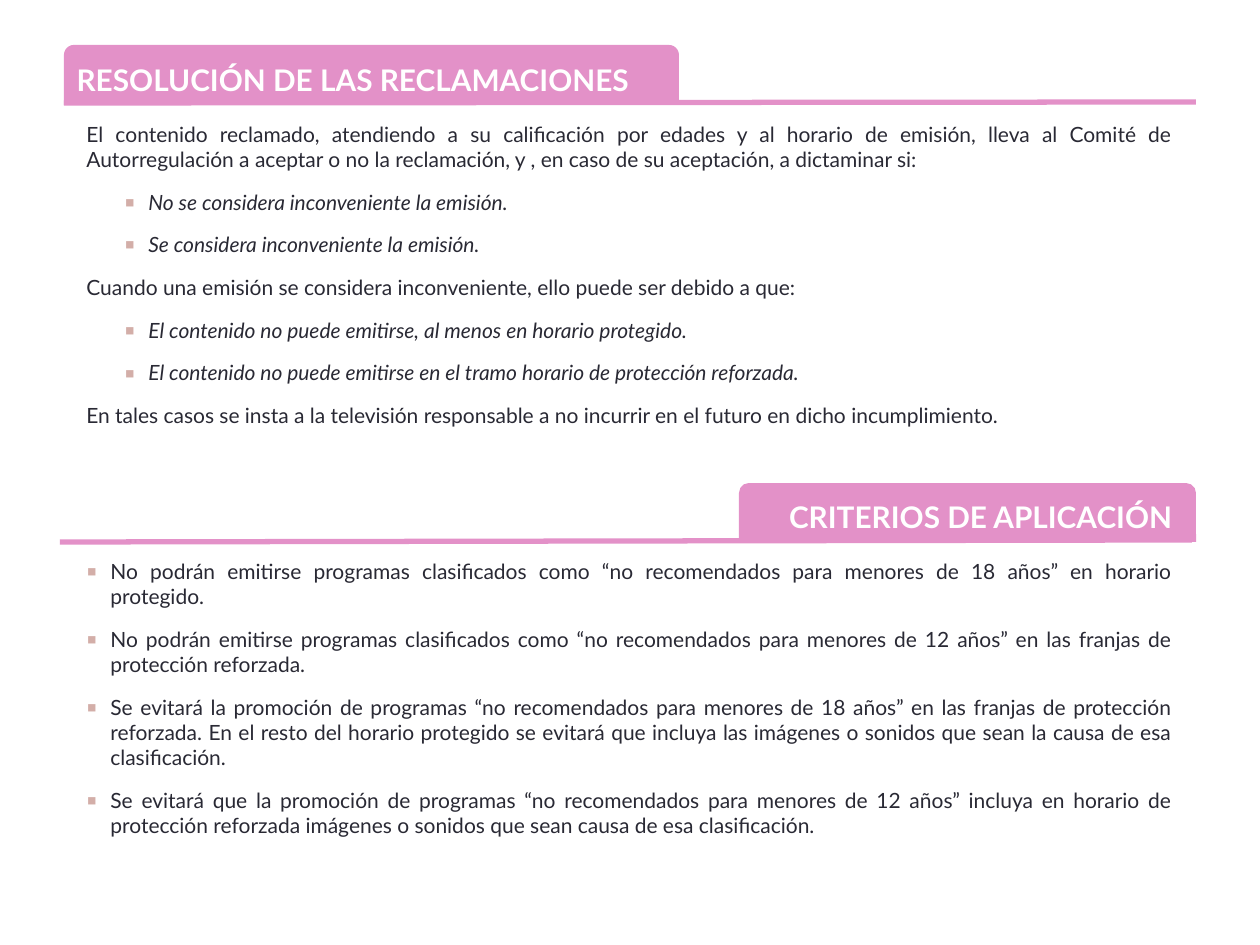
from dataclasses import dataclass

from pptx import Presentation
from pptx.dml.color import RGBColor
from pptx.enum.shapes import MSO_CONNECTOR, MSO_SHAPE
from pptx.enum.text import MSO_ANCHOR, MSO_AUTO_SIZE, PP_ALIGN
from pptx.oxml.xmlchemy import OxmlElement
from pptx.util import Pt

LEFT, RIGHT, JUST = PP_ALIGN.LEFT, PP_ALIGN.RIGHT, PP_ALIGN.JUSTIFY
TOP, FIXED = MSO_ANCHOR.TOP, MSO_AUTO_SIZE.NONE
TAB, LINE = MSO_SHAPE.ROUND_2_SAME_RECTANGLE, MSO_CONNECTOR.STRAIGHT
SCALE = 914400 / 126
FONT = "Lato"
HANG = 24
HEX = {"pink": "E391C8", "ink": "292934", "mark": "D3AEA8", "white": "FFFFFF"}


@dataclass(frozen=True)
class Box:
    x: int
    y: int
    w: int
    h: int


@dataclass(frozen=True)
class Item:
    text: str
    level: int = 1
    indent: int = 0
    italic: bool = False


@dataclass(frozen=True)
class Part:
    head: str
    align: PP_ALIGN
    tab: Box
    label: Box
    rule: tuple[int, int, int, int]
    body: Box
    items: tuple[Item, ...]


def point(text: str) -> Item:
    return Item(text, level=2, indent=62, italic=True)


def rule(text: str) -> Item:
    return Item(text, indent=HANG)


PARTS = (
    Part(
        "RESOLUCIÓN DE LAS RECLAMACIONES", LEFT,
        Box(64, 45, 615, 60), Box(64, 55, 655, 49), (64, 103, 1196, 102),
        Box(74, 115, 1111, 318),
        (
            Item("El contenido reclamado, atendiendo a su calificación por edades y al horario de emisión, "
                 "lleva al Comité de Autorregulación a aceptar o no la reclamación, y , en caso de su "
                 "aceptación, a dictaminar si:"),
            point("No se considera inconveniente la emisión."),
            point("Se considera inconveniente la emisión."),
            Item("Cuando una emisión se considera inconveniente, ello puede ser debido a que:"),
            point("El contenido no puede emitirse, al menos en horario protegido."),
            point("El contenido no puede emitirse en el tramo horario de protección reforzada."),
            Item("En tales casos se insta a la televisión responsable a no incurrir en el futuro en "
                 "dicho incumplimiento."),
        ),
    ),
    Part(
        "CRITERIOS DE APLICACIÓN", RIGHT,
        Box(739, 483, 457, 59), Box(679, 493, 506, 49), (60, 542, 1192, 540),
        Box(74, 552, 1111, 307),
        (
            rule("No podrán emitirse programas clasificados como “no recomendados para menores de 18 años” "
                 "en horario protegido."),
            rule("No podrán emitirse programas clasificados como “no recomendados para menores de 12 años” "
                 "en las franjas de protección reforzada."),
            rule("Se evitará la promoción de programas “no recomendados para menores de 18 años” en las "
                 "franjas de protección reforzada. En el resto del horario protegido se evitará que incluya "
                 "las imágenes o sonidos que sean la causa de esa clasificación."),
            rule("Se evitará que la promoción de programas “no recomendados para menores de 12 años” incluya "
                 "en horario de protección reforzada imágenes o sonidos que sean causa de esa clasificación."),
        ),
    ),
)


def px(n: int) -> int:
    return round(n * SCALE)


def tint(name: str) -> RGBColor:
    return RGBColor.from_string(HEX[name])


def place(shape, box: Box) -> None:
    shape.left, shape.top = px(box.x), px(box.y)
    shape.width, shape.height = px(box.w), px(box.h)


def frame(shape, box: Box):
    place(shape, box)
    area = shape.text_frame
    area.word_wrap = True
    area.auto_size = FIXED
    area.vertical_anchor = TOP
    return area


def write(para, text: str, *, size: int, color: str, align: PP_ALIGN,
          bold: bool = False, italic: bool = False, before: int = 0) -> None:
    para.alignment = align
    para.space_before = Pt(before)
    run = para.add_run()
    run.text = text
    font = run.font
    font.name, font.size = FONT, Pt(size)
    font.bold, font.italic = bold, italic
    font.color.rgb = tint(color)


def mark(para, indent: int) -> None:
    props = para._p.get_or_add_pPr()
    props.set("marL", str(px(indent)))
    props.set("indent", str(-px(HANG) if indent else 0))
    if not indent:
        props.append(OxmlElement("a:buNone"))
        return
    color = OxmlElement("a:buClr")
    value = OxmlElement("a:srgbClr")
    value.set("val", HEX["mark"])
    color.append(value)
    size = OxmlElement("a:buSzPct")
    size.set("val", "130000")
    face = OxmlElement("a:buFont")
    face.set("typeface", FONT)
    sign = OxmlElement("a:buChar")
    sign.set("char", "▪")
    for node in (color, size, face, sign):
        props.append(node)


def draw_tab(slide, box: Box) -> None:
    tab = slide.shapes.add_shape(TAB, 0, 0, 0, 0)
    place(tab, box)
    tab.shadow.inherit = False
    tab.fill.solid()
    tab.fill.fore_color.rgb = tint("pink")
    tab.line.fill.background()


def draw_line(slide, ends: tuple[int, int, int, int]) -> None:
    line = slide.shapes.add_connector(LINE, *map(px, ends))
    line.line.color.rgb = tint("pink")
    line.line.width = Pt(3)
    line._element.spPr.append(OxmlElement("a:effectLst"))


def draw_head(slide, part: Part, shape) -> None:
    slide.shapes._spTree.append(shape._element)
    area = frame(shape, part.label)
    write(area.paragraphs[0], part.head, size=17, color="white",
          align=part.align, bold=True)


def draw_body(slide, part: Part) -> None:
    area = frame(slide.shapes.add_textbox(0, 0, 0, 0), part.body)
    for i, item in enumerate(part.items):
        para = area.add_paragraph() if i else area.paragraphs[0]
        para.level = item.level
        write(para, item.text, size=12, color="ink", align=JUST,
              italic=item.italic, before=10)
        mark(para, item.indent)


def main() -> None:
    deck = Presentation()
    deck.slide_width, deck.slide_height = px(1260), px(945)
    slide = deck.slides.add_slide(deck.slide_layouts[5])
    title = slide.shapes.title
    for i, part in enumerate(PARTS):
        draw_body(slide, part)
        draw_line(slide, part.rule)
        draw_tab(slide, part.tab)
        shape = slide.shapes.add_textbox(0, 0, 0, 0) if i else title
        draw_head(slide, part, shape)
    deck.save("out.pptx")


if __name__ == "__main__":
    main()
